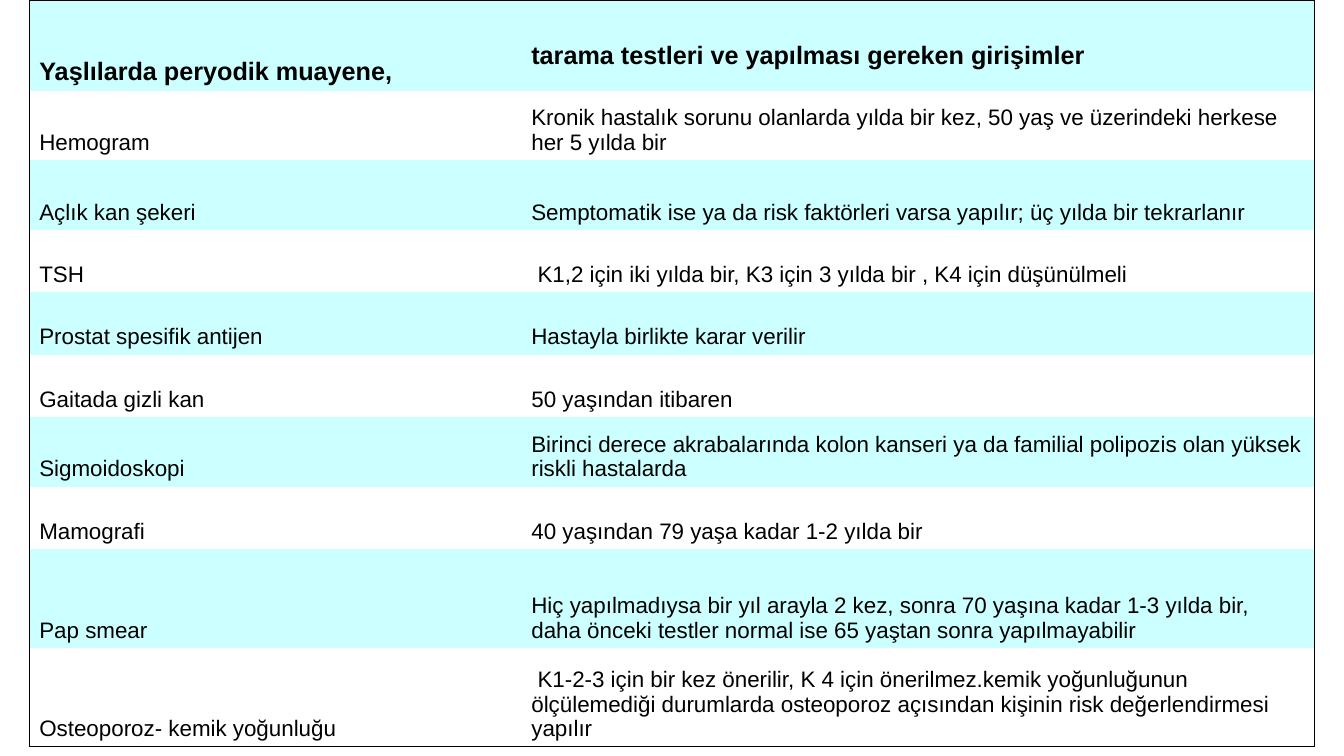
"""Build a slide with a table of periodic check-ups for the elderly."""
import pptx
import pptx.dml.color
import pptx.enum.text
import pptx.oxml
import pptx.oxml.ns
import pptx.util

Inches = pptx.util.Inches
Pt = pptx.util.Pt
BLACK = pptx.dml.color.RGBColor(0x00, 0x00, 0x00)
AQUA = pptx.dml.color.RGBColor(0xCC, 0xFF, 0xFF)
FONT = "Arial"
PLAIN_STYLE = "{2D5ABB26-0587-4C30-8999-92F81FD0307C}"
WIDTHS = [4.88, 7.87]
HEIGHTS = [0.9, 0.69, 0.69, 0.62, 0.62, 0.62, 0.69, 0.62, 0.98, 0.98]
ROWS = [
    ("Yaşlılarda peryodik muayene,",
     "tarama testleri ve yapılması gereken girişimler"),
    ("Hemogram",
     "Kronik hastalık sorunu olanlarda yılda bir kez, 50 yaş ve üzerindeki "
     "herkese her 5 yılda bir"),
    ("Açlık kan şekeri",
     "Semptomatik ise ya da risk faktörleri varsa yapılır; üç yılda bir "
     "tekrarlanır"),
    ("TSH",
     " K1,2 için iki yılda bir, K3 için 3 yılda bir , K4 için düşünülmeli"),
    ("Prostat spesifik antijen", "Hastayla birlikte karar verilir"),
    ("Gaitada gizli kan", "50 yaşından itibaren"),
    ("Sigmoidoskopi",
     "Birinci derece akrabalarında kolon kanseri ya da familial polipozis "
     "olan yüksek riskli hastalarda"),
    ("Mamografi", "40 yaşından 79 yaşa kadar 1-2 yılda bir"),
    ("Pap smear",
     "Hiç yapılmadıysa bir yıl arayla 2 kez, sonra 70 yaşına kadar 1-3 yılda "
     "bir, daha önceki testler normal ise 65 yaştan sonra yapılmayabilir"),
    ("Osteoporoz- kemik yoğunluğu",
     " K1-2-3 için bir kez önerilir, K 4 için önerilmez.kemik yoğunluğunun "
     "ölçülemediği durumlarda osteoporoz açısından kişinin risk "
     "değerlendirmesi yapılır"),
]


def add_edge(cell, side):
    """Draw a thin black line on one side (L, R, T or B) of a cell."""
    line = pptx.oxml.parse_xml(
        f'<a:ln{side} {pptx.oxml.ns.nsdecls("a")} w="{Pt(1)}">'
        f'<a:solidFill><a:srgbClr val="{BLACK}"/></a:solidFill></a:ln{side}>')
    cell._tc.get_or_add_tcPr().append(line)


def frame_cell(cell, row, col):
    """Draw the lines of a cell that lie on the outside of the table."""
    edges = {"L": col == 0, "R": col == len(WIDTHS) - 1,
             "T": row == 0, "B": row == len(ROWS) - 1}
    for side, outer in edges.items():
        if outer:
            add_edge(cell, side)


def fill_cell(cell, text, head, band):
    """Set the text, font and band colour of a cell."""
    cell.text = text
    cell.vertical_anchor = pptx.enum.text.MSO_ANCHOR.BOTTOM
    font = cell.text_frame.paragraphs[0].font
    font.name = FONT
    font.size = Pt(18 if head else 16)
    font.bold = head
    font.color.rgb = BLACK
    if band:
        cell.fill.solid()
        cell.fill.fore_color.rgb = AQUA
    else:
        cell.fill.background()


def add_tests(slide):
    """Add the table of tests, banded by row."""
    table = slide.shapes.add_table(
        len(ROWS), len(WIDTHS), Inches(0.29), Inches(0),
        Inches(sum(WIDTHS)), Inches(sum(HEIGHTS))).table
    table.first_row = table.horz_banding = False
    style = table._tbl.tblPr.find(pptx.oxml.ns.qn("a:tableStyleId"))
    style.text = PLAIN_STYLE
    for col, width in zip(table.columns, WIDTHS):
        col.width = Inches(width)
    for row, height in zip(table.rows, HEIGHTS):
        row.height = Inches(height)
    for row, texts in enumerate(ROWS):
        for col, text in enumerate(texts):
            cell = table.cell(row, col)
            frame_cell(cell, row, col)
            fill_cell(cell, text, row == 0, row % 2 == 0)
    table.cell(0, 1).margin_bottom = Inches(0.21)


def main():
    """Build and save the deck."""
    deck = pptx.Presentation()
    deck.slide_width = Inches(13.33)
    deck.slide_height = Inches(7.5)
    add_tests(deck.slides.add_slide(deck.slide_layouts[6]))
    deck.save("out.pptx")


if __name__ == "__main__":
    main()
